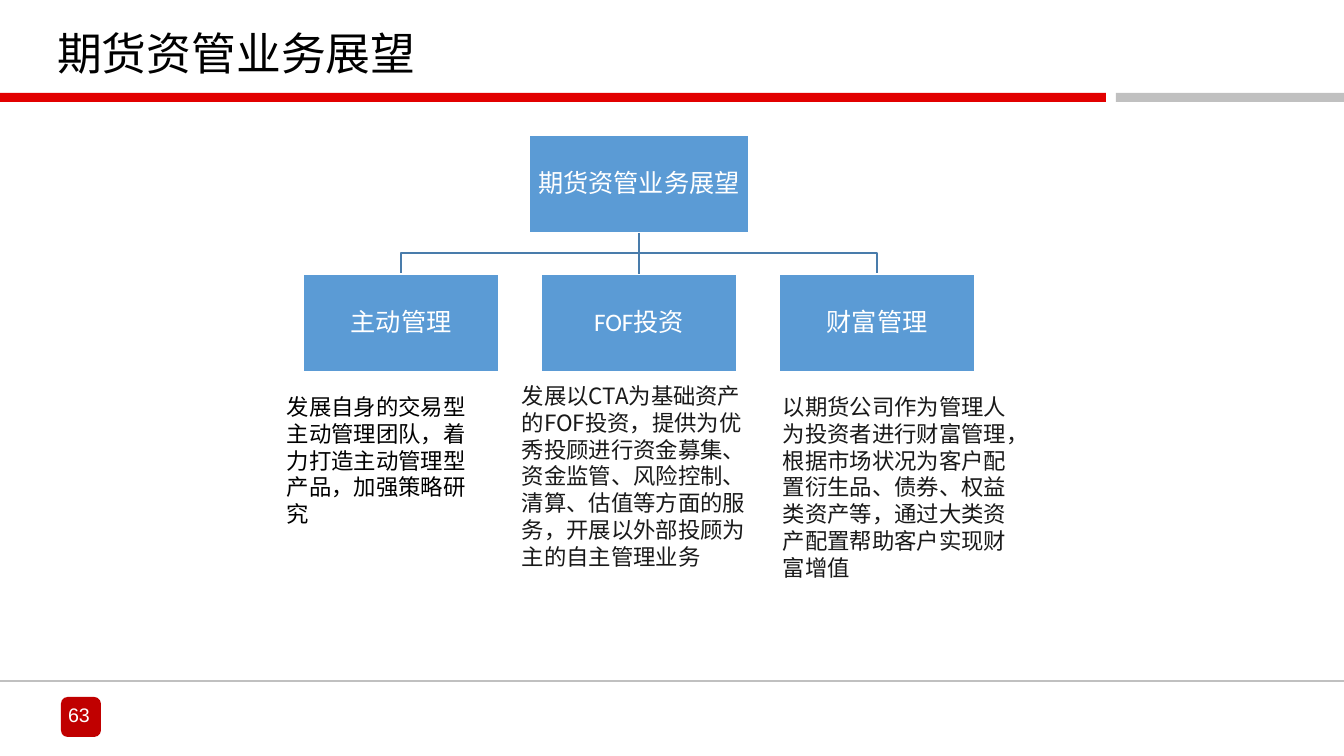
from lxml import etree
from pptx import Presentation
from pptx.dml.color import RGBColor
from pptx.enum import lang, shapes, text
from pptx.oxml import ns
from pptx.util import Pt

PX = 914400 / 100.8
BLACK = RGBColor(0x00, 0x00, 0x00)
DARK = RGBColor(0x19, 0x19, 0x19)
WHITE = RGBColor(0xFF, 0xFF, 0xFF)
RED = RGBColor(0xE2, 0x00, 0x00)
BADGE_RED = RGBColor(0xC0, 0x00, 0x00)
GREY = RGBColor(0xC0, 0xC0, 0xC0)
BLUE = RGBColor(0x5B, 0x9B, 0xD5)
LINE_BLUE = RGBColor(0x49, 0x7C, 0xAB)
CHINESE_FONT = "Noto Sans CJK SC"


def px(*lengths):
    """Turn pixel lengths into EMU."""
    return [round(length * PX) for length in lengths]


def write(shape, words, size, font_name, color, align, anchor):
    frame = shape.text_frame
    frame.word_wrap = True
    frame.auto_size = text.MSO_AUTO_SIZE.NONE
    frame.vertical_anchor = anchor
    paragraph = frame.paragraphs[0]
    paragraph.alignment = align
    run = paragraph.add_run()
    run.text = words
    run.font.size = Pt(size)
    run.font.name = font_name
    run.font.color.rgb = color
    run.font.language_id = lang.MSO_LANGUAGE_ID.SIMPLIFIED_CHINESE
    latin = run.font._element.find(ns.qn("a:latin"))
    latin.addnext(etree.Element(ns.qn("a:ea"), typeface=CHINESE_FONT))
    return paragraph


LEFT, CENTER = text.PP_ALIGN.LEFT, text.PP_ALIGN.CENTER
TOP, MIDDLE, BOTTOM = text.MSO_ANCHOR.TOP, text.MSO_ANCHOR.MIDDLE, text.MSO_ANCHOR.BOTTOM

presentation = Presentation()
presentation.slide_width, presentation.slide_height = px(1344, 756)
slide = presentation.slides.add_slide(presentation.slide_layouts[5])

# Title
title = slide.shapes.title
title.left, title.top, title.width, title.height = px(47, 12, 1109, 73)
paragraph = write(title, "期货资管业务展望", 32, "Times New Roman", BLACK, LEFT, BOTTOM)
paragraph.line_spacing = 0.9

# Header bars, footer line and page badge
RECTANGLE = shapes.MSO_SHAPE.RECTANGLE
for kind, box, color in [
    (RECTANGLE, (0, 93, 1106, 9), RED),
    (RECTANGLE, (1116, 93, 228, 9), GREY),
    (shapes.MSO_SHAPE.ROUNDED_RECTANGLE, (61, 697, 40, 40), BADGE_RED),
]:
    shape = slide.shapes.add_shape(kind, *px(*box))
    shape.shadow.inherit = False
    shape.fill.solid()
    shape.fill.fore_color.rgb = color
    shape.line.fill.background()

footer_line = slide.shapes.add_connector(
    shapes.MSO_CONNECTOR.STRAIGHT, *px(0, 681, 1344, 681))
page_number = slide.shapes.add_textbox(*px(31, 696, 96, 37))
write(page_number, "63", 14, "Arial", WHITE, CENTER, MIDDLE)

# Organisation chart
ROOT_CENTER, ROOT_BOTTOM, BRANCH_Y, CHILD_TOP = 639, 233, 253, 274
BOX_HEIGHT, CHILD_WIDTH, CHILD_STEP = 98, 196, 238
labels = ["主动管理", "FOF投资", "财富管理"]
child_centers = [ROOT_CENTER + CHILD_STEP * (i - 1) for i in range(len(labels))]

for center in (child_centers[0], child_centers[2]):
    builder = slide.shapes.build_freeform(ROOT_CENTER, ROOT_BOTTOM, scale=PX)
    builder.add_line_segments(
        [(ROOT_CENTER, BRANCH_Y), (center, BRANCH_Y), (center, CHILD_TOP)], close=False)
    branch = builder.convert_to_shape()
    branch.shadow.inherit = False
    branch.fill.background()
    branch.line.color.rgb = LINE_BLUE
    branch.line.width = Pt(1)

nodes = [("期货资管业务展望", ROOT_CENTER, ROOT_BOTTOM - BOX_HEIGHT, 220)]
nodes += [(label, center, CHILD_TOP, CHILD_WIDTH)
          for label, center in zip(labels, child_centers)]
boxes = []
for label, center, top, width in nodes:
    node = slide.shapes.add_shape(
        RECTANGLE, *px(center - width / 2, top, width, BOX_HEIGHT))
    node.shadow.inherit = False
    node.fill.solid()
    node.fill.fore_color.rgb = BLUE
    node.line.color.rgb = WHITE
    node.line.width = Pt(1)
    frame = node.text_frame
    frame.margin_left, frame.margin_top, frame.margin_right, frame.margin_bottom = px(1, 1, 1, 1)
    paragraph = write(node, label, 18, "Calibri", WHITE, CENTER, MIDDLE)
    paragraph.line_spacing = 0.9
    boxes.append(node)

middle_branch = slide.shapes.add_connector(
    shapes.MSO_CONNECTOR.STRAIGHT, *px(ROOT_CENTER, ROOT_BOTTOM, ROOT_CENTER, CHILD_TOP))
middle_branch.begin_connect(boxes[0], 2)
middle_branch.end_connect(boxes[2], 0)

for connector, color in [(footer_line, GREY), (middle_branch, LINE_BLUE)]:
    connector.line.color.rgb = color
    connector.line.width = Pt(1)
    etree.SubElement(connector._element.spPr, ns.qn("a:effectLst"))

# Descriptions under the branches
for words, box, font_name, color in [
    ("发展自身的交易型主动管理团队，着力打造主动管理型产品，加强策略研究",
     (277, 388, 202, 146), "Calibri", BLACK),
    ("发展以CTA为基础资产的FOF投资，提供为优秀投顾进行资金募集、资金监管、风险控制、"
     "清算、估值等方面的服务，开展以外部投顾为主的自主管理业务",
     (512, 377, 251, 201), CHINESE_FONT, DARK),
    ("以期货公司作为管理人为投资者进行财富管理，根据市场状况为客户配置衍生品、债券、"
     "权益类资产等，通过大类资产配置帮助客户实现财富增值",
     (773, 388, 253, 201), CHINESE_FONT, DARK),
]:
    description = slide.shapes.add_textbox(*px(*box))
    write(description, words, 16, font_name, color, LEFT, TOP)

presentation.save("out.pptx")
